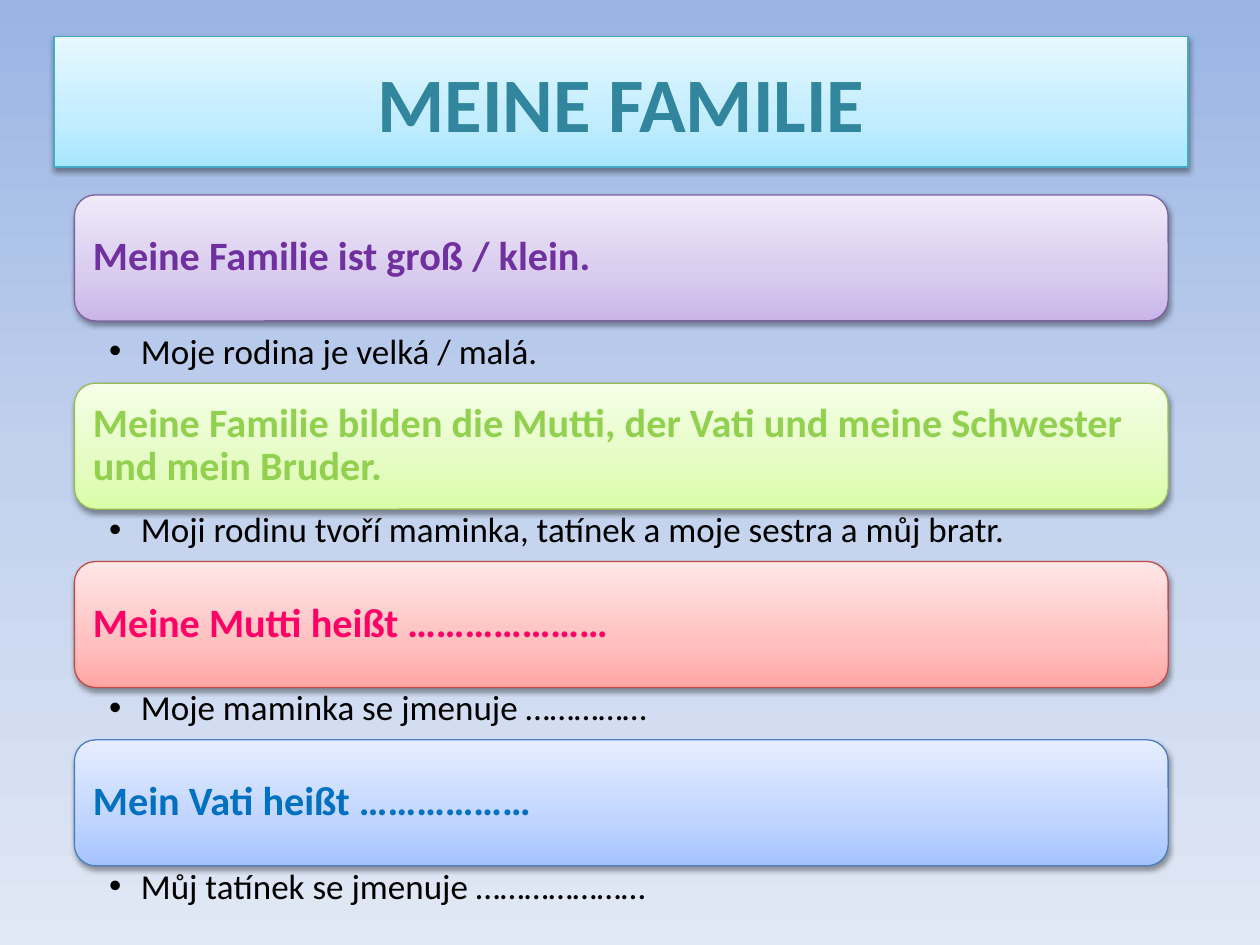
from lxml import etree
from pptx import Presentation
from pptx.dml.color import RGBColor
from pptx.enum.shapes import MSO_SHAPE
from pptx.enum.text import MSO_ANCHOR, PP_ALIGN
from pptx.oxml import parse_xml
from pptx.oxml.ns import nsdecls, qn
from pptx.util import Cm, Pt

ROUNDED = MSO_SHAPE.ROUNDED_RECTANGLE
MIDDLE, TOP = MSO_ANCHOR.MIDDLE, MSO_ANCHOR.TOP
LEFT, CENTER = PP_ALIGN.LEFT, PP_ALIGN.CENTER

COLORS = {
    "text": "000000",
    "title": "31859C", "title_line": "46AAC5",
    "purple": "7030A0", "purple_line": "7D60A0",
    "green": "92D050", "green_line": "98B955",
    "red": "FF0066", "red_line": "BF4C48",
    "blue": "0070C0", "blue_line": "4B7EBC",
}
GRADIENTS = {
    "background": ((0, "9AB5E4"), (50, "C2D1ED"), (100, "E1E8F5")),
    "title": ((0, "A7E6FF"), (35, "C1EDFF"), (100, "E7F8FF")),
    "purple": ((0, "C9B5E8"), (35, "D8CBEE"), (100, "F0EAF9")),
    "green": ((0, "DAFDA7"), (35, "E4FCC2"), (100, "F5FFE7")),
    "red": ((0, "FFA6A5"), (35, "FFC0BF"), (100, "FFE7E7")),
    "blue": ((0, "A4C4FF"), (35, "BFD4FF"), (100, "E6EEFF")),
}
SENTENCES = [
    ("purple", "Meine Familie ist groß / klein.", "Moje rodina je velká / malá."),
    ("green", "Meine Familie bilden die Mutti, der Vati und meine Schwester und mein Bruder.",
     "Moji rodinu tvoří maminka, tatínek a moje sestra a můj bratr."),
    ("red", "Meine Mutti heißt …………………", "Moje maminka se jmenuje ……………"),
    ("blue", "Mein Vati heißt ………………", "Můj tatínek se jmenuje …………………"),
]


def set_gradient(fill, element, name, angle):
    fill.gradient()
    fill.gradient_angle = angle
    stops = next(element.iter(qn("a:gsLst")))
    for stop in list(stops):
        stops.remove(stop)
    for pos, color in GRADIENTS[name]:
        gs = etree.SubElement(stops, qn("a:gs"), pos=str(pos * 1000))
        etree.SubElement(gs, qn("a:srgbClr"), val=color)


def style_panel(sp, name):
    set_gradient(sp.fill, sp._element.spPr, name, 90)
    sp.line.color.rgb = RGBColor.from_string(COLORS[name + "_line"])
    sp.line.width = Pt(0.75)
    sp._element.spPr.append(parse_xml(
        f'<a:effectLst {nsdecls("a")}><a:outerShdw blurRad="40000" dist="20000" '
        'dir="5400000" rotWithShape="0"><a:srgbClr val="000000">'
        '<a:alpha val="38000"/></a:srgbClr></a:outerShdw></a:effectLst>'))


def write_text(sp, text, color, size, bold, align, anchor, margins, spacing=0.9):
    tf = sp.text_frame
    sides = ("margin_left", "margin_top", "margin_right", "margin_bottom")
    frame = dict(zip(sides, map(Cm, margins)), word_wrap=True, vertical_anchor=anchor)
    for key, value in frame.items():
        setattr(tf, key, value)
    p = tf.paragraphs[0]
    p.alignment, p.line_spacing = align, spacing
    r = p.add_run()
    r.text = text
    for key, value in {"name": "Calibri", "size": Pt(size), "bold": bold}.items():
        setattr(r.font, key, value)
    r.font.color.rgb = RGBColor.from_string(COLORS[color])
    return p


def add_title(s, box, text):
    sp = s.shapes.title
    for key, value in zip(("left", "top", "width", "height"), box):
        setattr(sp, key, Cm(value))
    style_panel(sp, "title")
    write_text(sp, text, "title", 44, True, CENTER, MIDDLE, (0.25, 0.13, 0.25, 0.13), 1.0)


def add_card(s, box, name, text):
    sp = s.shapes.add_shape(ROUNDED, *map(Cm, box))
    style_panel(sp, name)
    write_text(sp, text, name, 23, True, LEFT, MIDDLE, (0.25,) * 4)


def add_translation(s, box, text):
    sp = s.shapes.add_textbox(*map(Cm, box))
    p = write_text(sp, text, "text", 20, False, LEFT, TOP, (0.7, 0.07, 0.4, 0.07))
    pPr = p._p.get_or_add_pPr()
    pPr.set("marL", str(Cm(0.64)))
    pPr.set("indent", str(-Cm(0.64)))
    etree.SubElement(pPr, qn("a:buFont"), typeface="Arial")
    etree.SubElement(pPr, qn("a:buChar"), char="•")


def add_sentences(s, box):
    left, top, width, height = box
    card_h, line_h, first_gap = 2.54, 1.06, 0.2
    pitch = (height - first_gap) / len(SENTENCES)
    for i, (name, german, czech) in enumerate(SENTENCES):
        bottom = top + first_gap + pitch * (i + 1)
        card_top = top if i == 0 else bottom - pitch
        add_card(s, (left, card_top, width, card_h), name, german)
        add_translation(s, (left, bottom - line_h, width, line_h), czech)


def main():
    prs = Presentation()
    prs.slide_width, prs.slide_height = Cm(25.4), Cm(19.05)
    s = prs.slides.add_slide(prs.slide_layouts[5])
    set_gradient(s.background.fill, s._element, "background", 270)
    add_title(s, (1.09, 0.73, 22.86, 2.64), "MEINE FAMILIE")
    add_sentences(s, (1.5, 3.93, 22.05, 14.58))
    prs.save("out.pptx")


if __name__ == "__main__":
    main()
